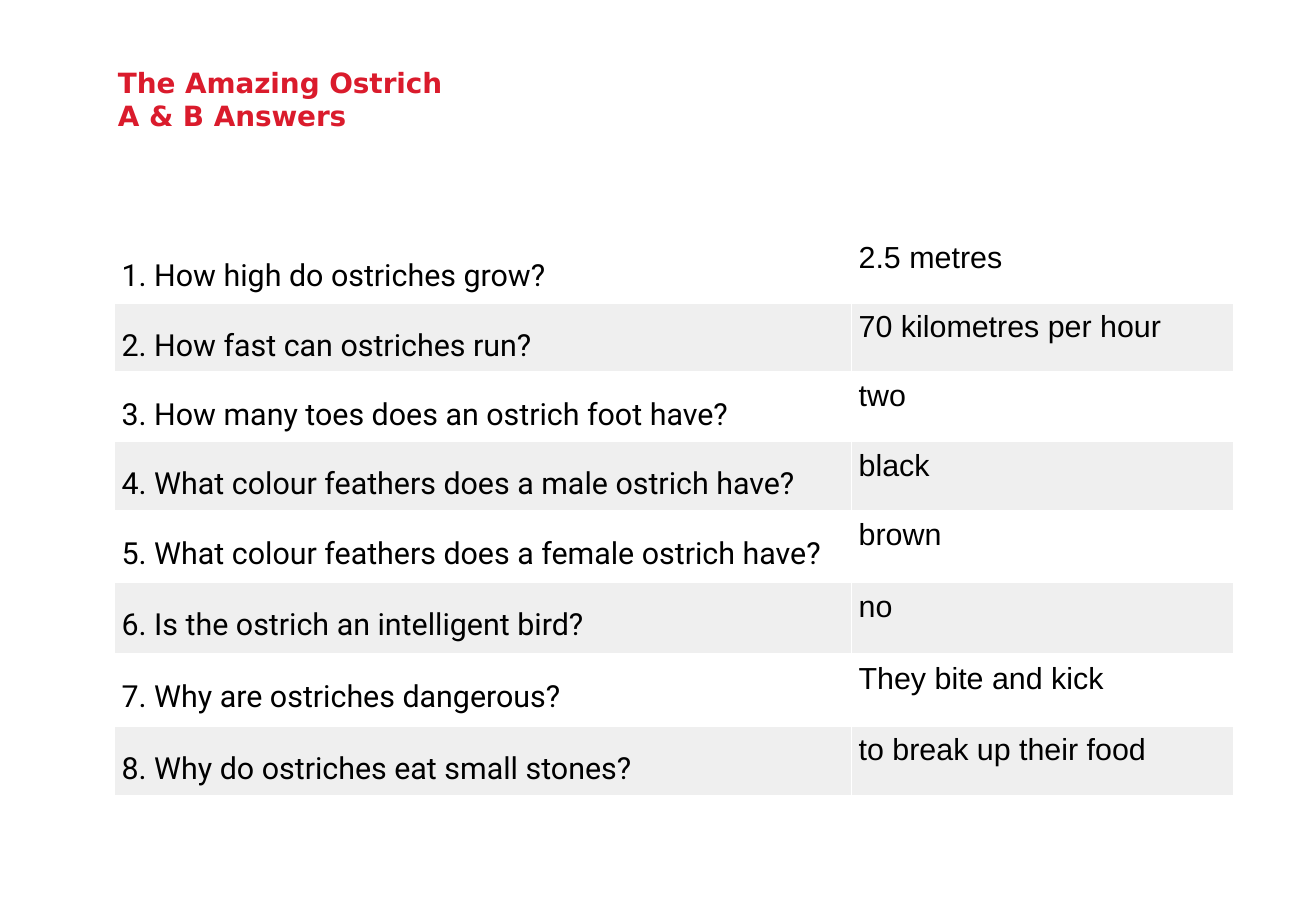
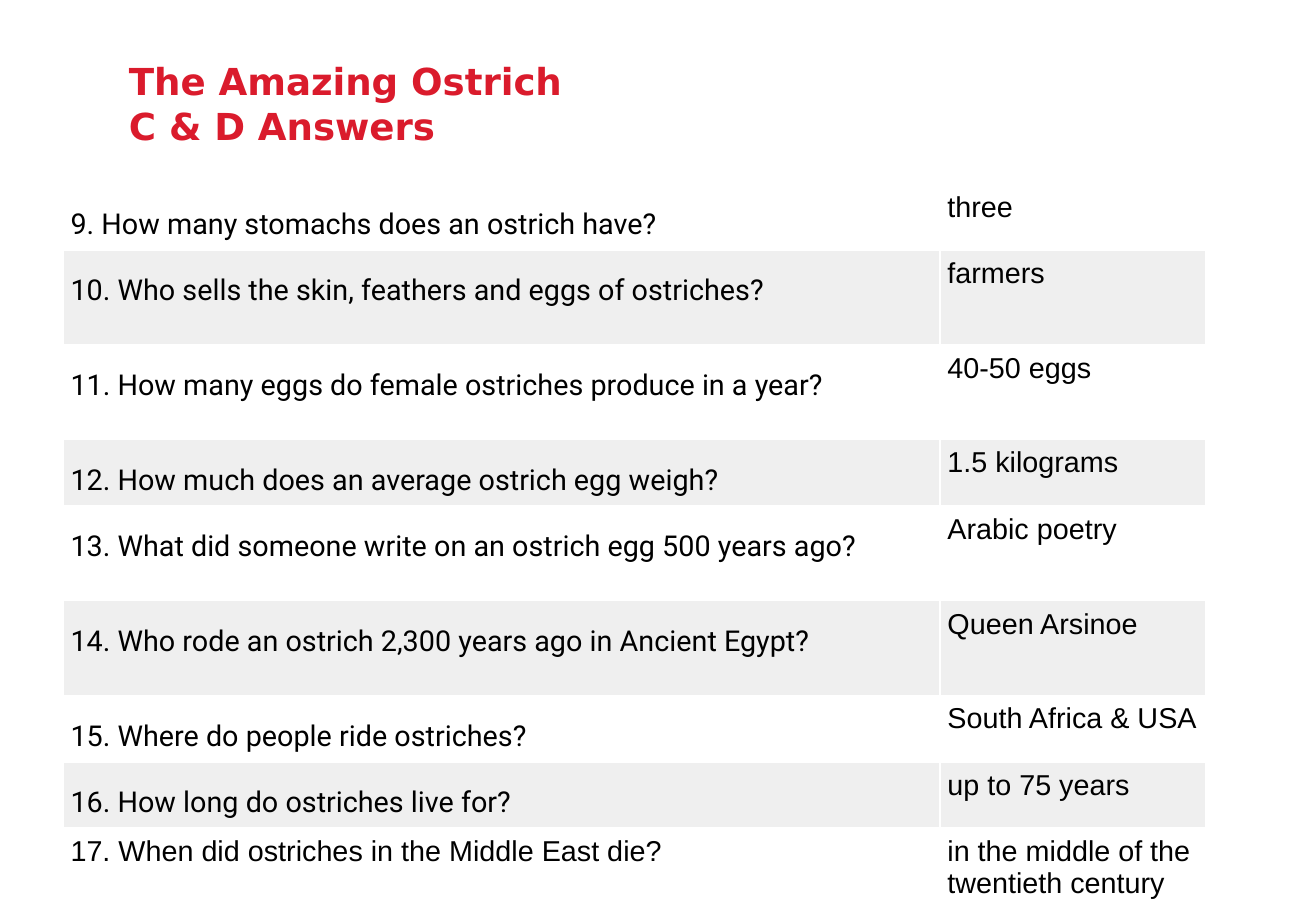
from pptx import Presentation
from pptx import util as u
from pptx.dml.color import RGBColor
from pptx.enum import text

PX = 9144  # one px is a hundredth of an inch
COLORS = {"title": "DA1B2C", "text": "000000", "plain": "FFFFFF", "band": "EFEFEF"}
TITLE_FONT, QUESTION_FONT, ANSWER_FONT = "DejaVu Sans", "Roboto", "Arial"
CELL_INSET = 6

SLIDES = [
    {
        "title": ["The Amazing Ostrich", "A & B Answers"],
        "title_box": (97, 54, 867, 84),
        "title_size": 16.5,
        "table_at": (94, 192),
        "columns": (606, 314),
        "row_heights": (47, 47, 52, 52, 59, 59, 59, 47),
        "size": 18,
        "rows": [
            ("1. How high do ostriches grow?", "2.5 metres"),
            ("2. How fast can ostriches run?", "70 kilometres per hour"),
            ("3. How many toes does an ostrich foot have?", "two"),
            ("4. What colour feathers does a male ostrich have?", "black"),
            ("5. What colour feathers does a female ostrich have?", "brown"),
            ("6. Is the ostrich an intelligent bird?", "no"),
            ("7. Why are ostriches dangerous?", "They bite and kick"),
            ("8. Why do ostriches eat small stones?", "to break up their food"),
        ],
        "compact_rows": (),
    },
    {
        "title": ["The Amazing Ostrich", "C & D Answers"],
        "title_box": (106, 48, 869, 86),
        "title_size": 22,
        "table_at": (52, 151),
        "columns": (721, 218),
        "row_heights": (39, 78, 78, 42, 78, 78, 42, 42, 67),
        "size": 17,
        "rows": [
            ("9. How many stomachs does an ostrich have?", "three"),
            ("10. Who sells the skin, feathers and eggs of ostriches?", "farmers"),
            ("11. How many eggs do female ostriches produce in a year?", "40-50 eggs"),
            ("12. How much does an average ostrich egg weigh?", "1.5 kilograms"),
            ("13. What did someone write on an ostrich egg 500 years ago?", "Arabic poetry"),
            ("14. Who rode an ostrich 2,300 years ago in Ancient Egypt?", "Queen Arsinoe"),
            ("15. Where do people ride ostriches?", "South Africa & USA"),
            ("16. How long do ostriches live for?", "up to 75 years"),
            ("17. When did ostriches in the Middle East die?",
             "in the middle of the twentieth century"),
        ],
        "compact_rows": (8,),
    },
]


def color(name):
    return RGBColor.from_string(COLORS[name])


def set_font(p, name, size, color_name, bold=False):
    p.font.name, p.font.size, p.font.bold = name, u.Pt(size), bold
    p.font.color.rgb = color(color_name)


def set_insets(target, inset):
    target.margin_left = target.margin_right = inset * PX
    target.margin_top = target.margin_bottom = inset * PX


def add_title(s, lines, box, size):
    tf = s.shapes.add_textbox(*(v * PX for v in box)).text_frame
    tf.word_wrap = True
    tf.vertical_anchor = text.MSO_ANCHOR.TOP
    set_insets(tf, 0)
    tf.text = "\n".join(lines)
    for p in tf.paragraphs:
        set_font(p, TITLE_FONT, size, "title", bold=True)


def fill_cell(cell, words, font, size, fill, spacing):
    set_insets(cell, CELL_INSET)
    cell.fill.solid()
    cell.fill.fore_color.rgb = color(fill)
    cell.text = words
    p = cell.text_frame.paragraphs[0]
    p.line_spacing = spacing
    set_font(p, font, size, "text")


def add_answers(s, data):
    """Add the question and answer table; compact rows use the answer style throughout."""
    columns, heights = data["columns"], data["row_heights"]
    left, top = data["table_at"]
    table = s.shapes.add_table(
        len(heights), len(columns),
        left * PX, top * PX, sum(columns) * PX, sum(heights) * PX).table
    table.first_row = table.horz_banding = False
    for column, width in zip(table.columns, columns):
        column.width = width * PX
    for i, (row, height, words) in enumerate(zip(table.rows, heights, data["rows"])):
        row.height = height * PX
        fill = "band" if i % 2 else "plain"
        answer_style = (ANSWER_FONT, data["size"], fill, 1.0)
        question_style = (QUESTION_FONT, data["size"], fill, 1.5)
        if i in data["compact_rows"]:
            question_style = answer_style
        for cell, value, style in zip(row.cells, words, (question_style, answer_style)):
            fill_cell(cell, value, *style)


def main():
    prs = Presentation()
    prs.slide_width, prs.slide_height = 1082 * PX, 750 * PX
    for data in SLIDES:
        s = prs.slides.add_slide(prs.slide_layouts[6])
        add_title(s, data["title"], data["title_box"], data["title_size"])
        add_answers(s, data)
    prs.save("out.pptx")


if __name__ == "__main__":
    main()
